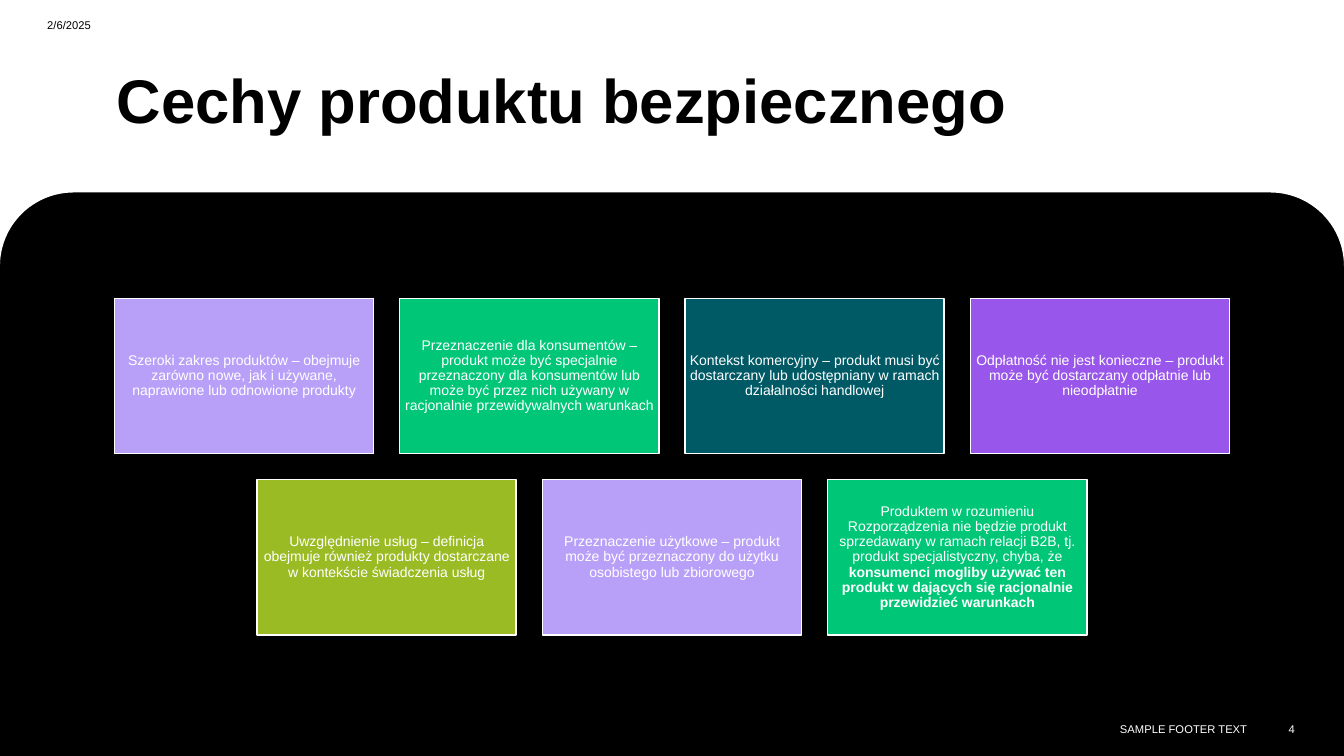
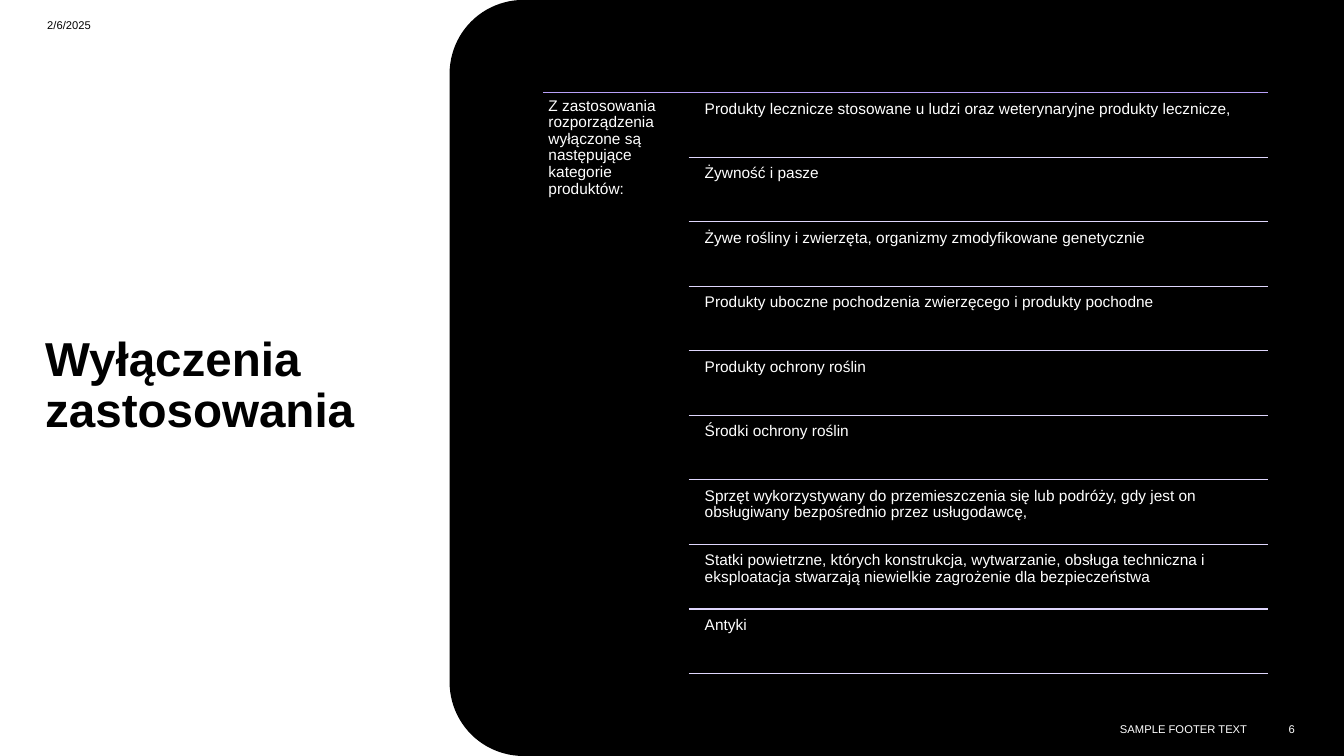
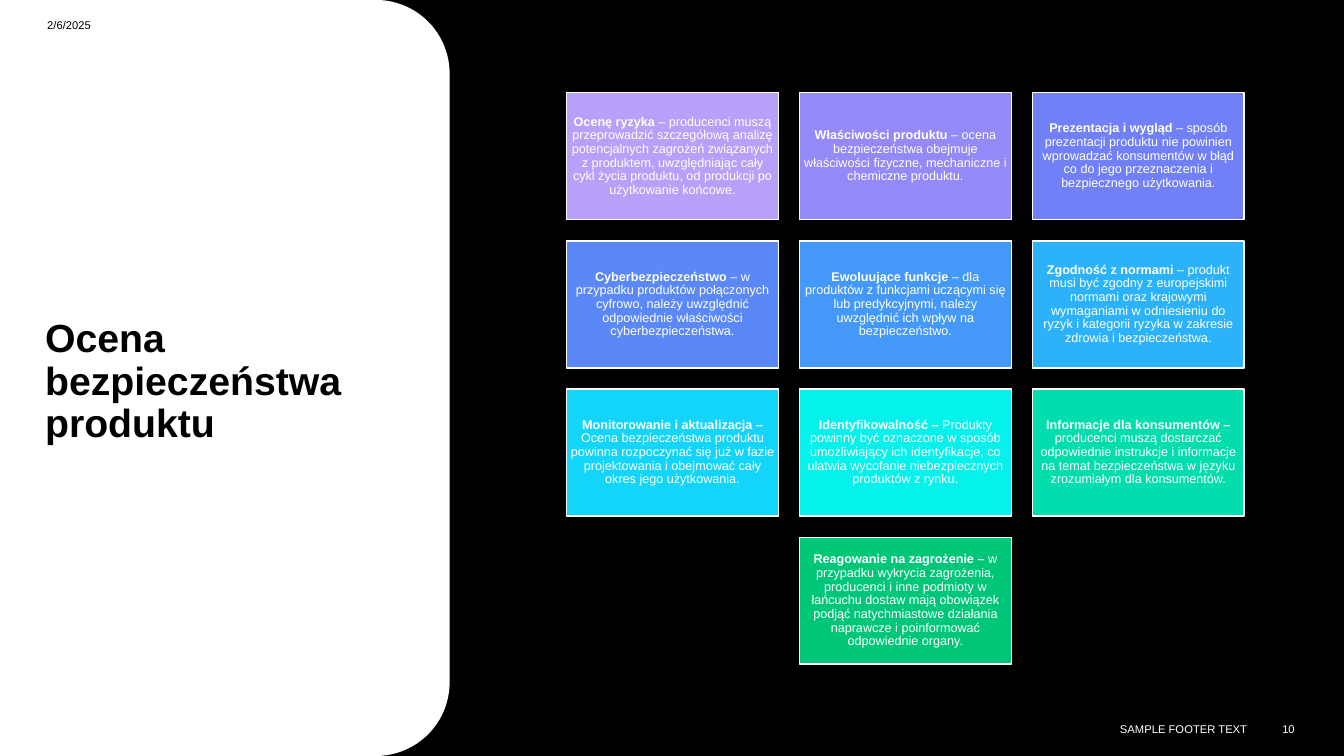
"""Three slides on product safety: features, exclusions and assessment."""
from math import cos, radians, sin

from lxml.etree import SubElement
from pptx import Presentation
from pptx.dml.color import RGBColor
from pptx.enum.shapes import MSO_CONNECTOR, MSO_SHAPE
from pptx.enum.text import MSO_ANCHOR, PP_ALIGN
from pptx.oxml.ns import qn
from pptx.util import Inches, Pt

FONT = "Arial"
WIDE, HIGH = 13.33, 7.5
ROUND = 0.73
COLORS = {
    "black": "000000", "white": "FFFFFF", "lilac": "B8A0F8", "pale": "DFD6FC",
    "green": "00C777", "teal": "005A66", "purple": "9956EA", "olive": "9BBB25",
    "violet": "9389F7", "indigo": "7280F7", "blue": "5B88F7", "azure": "4498F8",
    "sky": "2CB2F8", "cyan": "13D5F9", "aqua": "04F2EB", "mint": "02DDAD",
}
DATE, FOOTER = "2/6/2025", "SAMPLE FOOTER TEXT"

TRAITS = [
    ("lilac", "Szeroki zakres produktów – obejmuje zarówno nowe, jak i używane, naprawione lub odnowione produkty", ""),
    ("green", "Przeznaczenie dla konsumentów – produkt może być specjalnie przeznaczony dla konsumentów lub może być przez nich używany w racjonalnie przewidywalnych warunkach", ""),
    ("teal", "Kontekst komercyjny – produkt musi być dostarczany lub udostępniany w ramach działalności handlowej", ""),
    ("purple", "Odpłatność nie jest konieczne – produkt może być dostarczany odpłatnie lub nieodpłatnie", ""),
    ("olive", "Uwzględnienie usług – definicja obejmuje również produkty dostarczane w kontekście świadczenia usług", ""),
    ("lilac", "Przeznaczenie użytkowe – produkt może być przeznaczony do użytku osobistego lub zbiorowego", ""),
    ("green", "Produktem w rozumieniu Rozporządzenia nie będzie produkt sprzedawany w ramach relacji B2B, tj. produkt specjalistyczny, chyba, że ",
     "konsumenci mogliby używać ten produkt w dających się racjonalnie przewidzieć warunkach"),
]
LEAD = "Z zastosowania rozporządzenia wyłączone są następujące kategorie produktów:"
EXEMPT = [
    "Produkty lecznicze stosowane u ludzi oraz weterynaryjne produkty lecznicze,",
    "Żywność i pasze",
    "Żywe rośliny i zwierzęta, organizmy zmodyfikowane genetycznie",
    "Produkty uboczne pochodzenia zwierzęcego i produkty pochodne",
    "Produkty ochrony roślin",
    "Środki ochrony roślin",
    "Sprzęt wykorzystywany do przemieszczenia się lub podróży, gdy jest on obsługiwany bezpośrednio przez usługodawcę,",
    "Statki powietrzne, których konstrukcja, wytwarzanie, obsługa techniczna i eksploatacja stwarzają niewielkie zagrożenie dla bezpieczeństwa",
    "Antyki",
]
CHECKS = [
    ("lilac", "Ocenę ryzyka", " – producenci muszą przeprowadzić szczegółową analizę potencjalnych zagrożeń związanych z produktem, uwzględniając cały cykl życia produktu, od produkcji po użytkowanie końcowe."),
    ("violet", "Właściwości produktu", " – ocena bezpieczeństwa obejmuje właściwości fizyczne, mechaniczne i chemiczne produktu."),
    ("indigo", "Prezentacja i wygląd", " – sposób prezentacji produktu nie powinien wprowadzać konsumentów w błąd co do jego przeznaczenia i bezpiecznego użytkowania."),
    ("blue", "Cyberbezpieczeństwo ", "– w przypadku produktów połączonych cyfrowo, należy uwzględnić odpowiednie właściwości cyberbezpieczeństwa."),
    ("azure", "Ewoluujące funkcje ", "– dla produktów z funkcjami uczącymi się lub predykcyjnymi, należy uwzględnić ich wpływ na bezpieczeństwo."),
    ("sky", "Zgodność z normami ", "– produkt musi być zgodny z europejskimi normami oraz krajowymi wymaganiami w odniesieniu do ryzyk i kategorii ryzyka w zakresie zdrowia i bezpieczeństwa."),
    ("cyan", "Monitorowanie i aktualizacja – ", "Ocena bezpieczeństwa produktu powinna rozpoczynać się już w fazie projektowania i obejmować cały okres jego użytkowania."),
    ("aqua", "Identyfikowalność – ", "Produkty powinny być oznaczone w sposób umożliwiający ich identyfikacje, co ułatwia wycofanie niebezpiecznych produktów z rynku."),
    ("mint", "Informacje dla konsumentów – ", "producenci muszą dostarczać odpowiednie instrukcje i informacje na temat bezpieczeństwa w języku zrozumiałym dla konsumentów."),
    ("green", "Reagowanie na zagrożenie – ", "w przypadku wykrycia zagrożenia, producenci i inne podmioty w łańcuchu dostaw mają obowiązek podjąć natychmiastowe działania naprawcze i poinformować odpowiednie organy."),
]


def rgb(name):
    return RGBColor.from_string(COLORS[name])


def paint(shape, fill, line=None):
    shape.shadow.inherit = False
    shape.fill.solid()
    shape.fill.fore_color.rgb = rgb(fill)
    if line:
        shape.line.color.rgb = rgb(line)
        shape.line.width = Pt(1)
    else:
        shape.line.fill.background()


def write(shape, *runs, size=8, color="white", bold=(False, False), align=PP_ALIGN.LEFT,
          anchor=MSO_ANCHOR.MIDDLE, space=0.9, inset=None):
    frame = shape.text_frame
    frame.word_wrap = True
    frame.vertical_anchor = anchor
    if inset is not None:
        frame.margin_left = frame.margin_right = Inches(inset)
        frame.margin_top = frame.margin_bottom = Inches(inset)
    para = frame.paragraphs[0]
    para.alignment = align
    para.line_spacing = space
    for words, heavy in zip(runs, bold):
        if words:
            run = para.add_run()
            run.text = words
            run.font.name = FONT
            run.font.size = Pt(size)
            run.font.bold = heavy
            run.font.color.rgb = rgb(color)


def label(slide, box, *runs, **style):
    write(slide.shapes.add_textbox(*map(Inches, box)), *runs, **style)


def panel(slide, fill, ends, arcs):
    points = list(ends)
    for x, y, start, stop in arcs:
        for step in range(25):
            turn = radians(start + (stop - start) * step / 24)
            points.append((x + ROUND * cos(turn), y + ROUND * sin(turn)))
    points = [(Inches(x), Inches(y)) for x, y in points]
    form = slide.shapes.build_freeform(*points[0], scale=1.0)
    form.add_line_segments(points[1:], close=True)
    paint(form.convert_to_shape(), fill)


def start(deck, back, fill, ends, arcs, title, box, size, number):
    slide = deck.slides.add_slide(deck.slide_layouts[6])
    slide.background.fill.solid()
    slide.background.fill.fore_color.rgb = rgb(back)
    panel(slide, fill, ends, arcs)
    label(slide, box, title, size=size, color="black", bold=(True,))
    label(slide, (0.37, 0.07, 3, 0.35), DATE, color="black", space=1)
    for place, words in (((8.03, 7.03, 4.44, 0.4), FOOTER), ((12.47, 7.03, 0.47, 0.4), number)):
        label(slide, place, words, align=PP_ALIGN.RIGHT, space=1)
    return slide


def grid(slide, cards, cols, mid, top, wide, high, gap, size, bold):
    for first in range(0, len(cards), cols):
        row = cards[first:first + cols]
        left = mid - (len(row) * (wide + gap) - gap) / 2
        y = top + first // cols * (high + gap)
        for col, (fill, *runs) in enumerate(row):
            x = left + col * (wide + gap)
            card = slide.shapes.add_shape(MSO_SHAPE.RECTANGLE, *map(Inches, (x, y, wide, high)))
            paint(card, fill, "white")
            write(card, *runs, size=size, bold=bold, align=PP_ALIGN.CENTER, inset=0.04)


def rule(slide, x, y, end, color):
    line = slide.shapes.add_connector(MSO_CONNECTOR.STRAIGHT, *map(Inches, (x, y, end, y)))
    line.line.color.rgb = rgb(color)
    line.line.width = Pt(1)
    SubElement(line._element.spPr, qn("a:effectLst"))


def ledger(slide, left, top, right, step):
    style = dict(size=11, anchor=MSO_ANCHOR.TOP, inset=0.05)
    rule(slide, left, top, right, "lilac")
    label(slide, (left, top, 1.44, 5.79), LEAD, **style)
    split = left + 1.44
    for row, words in enumerate(EXEMPT):
        y = top + row * step
        label(slide, (split + 0.11, y + 0.03, right - split - 0.11, 0.61), words, **style)
        rule(slide, split, y + step, right, "pale")


def main():
    deck = Presentation()
    deck.slide_width, deck.slide_height = Inches(WIDE), Inches(HIGH)
    low = HIGH - ROUND

    slide = start(deck, "black", "white", [(0, 0), (WIDE, 0)],
                  [(WIDE - ROUND, 2.64, 0, -90), (ROUND, 2.64, -90, -180)],
                  "Cechy produktu bezpiecznego", (1.06, 0.29, 10.9, 1.47), 44, "4")
    grid(slide, TRAITS, 4, WIDE / 2, 2.96, 2.57, 1.54, 0.26, 10, (False, True))

    slide = start(deck, "white", "black", [(WIDE, 0), (WIDE, HIGH)],
                  [(4.46 + ROUND, low, 90, 180), (4.46 + ROUND, ROUND, 180, 270)],
                  "Wyłączenia zastosowania", (0.35, 0.9, 3.53, 5.87), 34, "6")
    ledger(slide, 5.39, 0.92, 12.58, 0.64)

    slide = start(deck, "black", "white", [(0, HIGH), (0, 0)],
                  [(4.46 - ROUND, ROUND, -90, 0), (4.46 - ROUND, low, 0, 90)],
                  "Ocena bezpieczeństwa produktu", (0.35, 0.82, 3.53, 5.95), 28, "10")
    grid(slide, CHECKS, 3, 8.98, 0.92, 2.1, 1.26, 0.21, 9, (True, False))

    deck.save("out.pptx")


if __name__ == "__main__":
    main()
